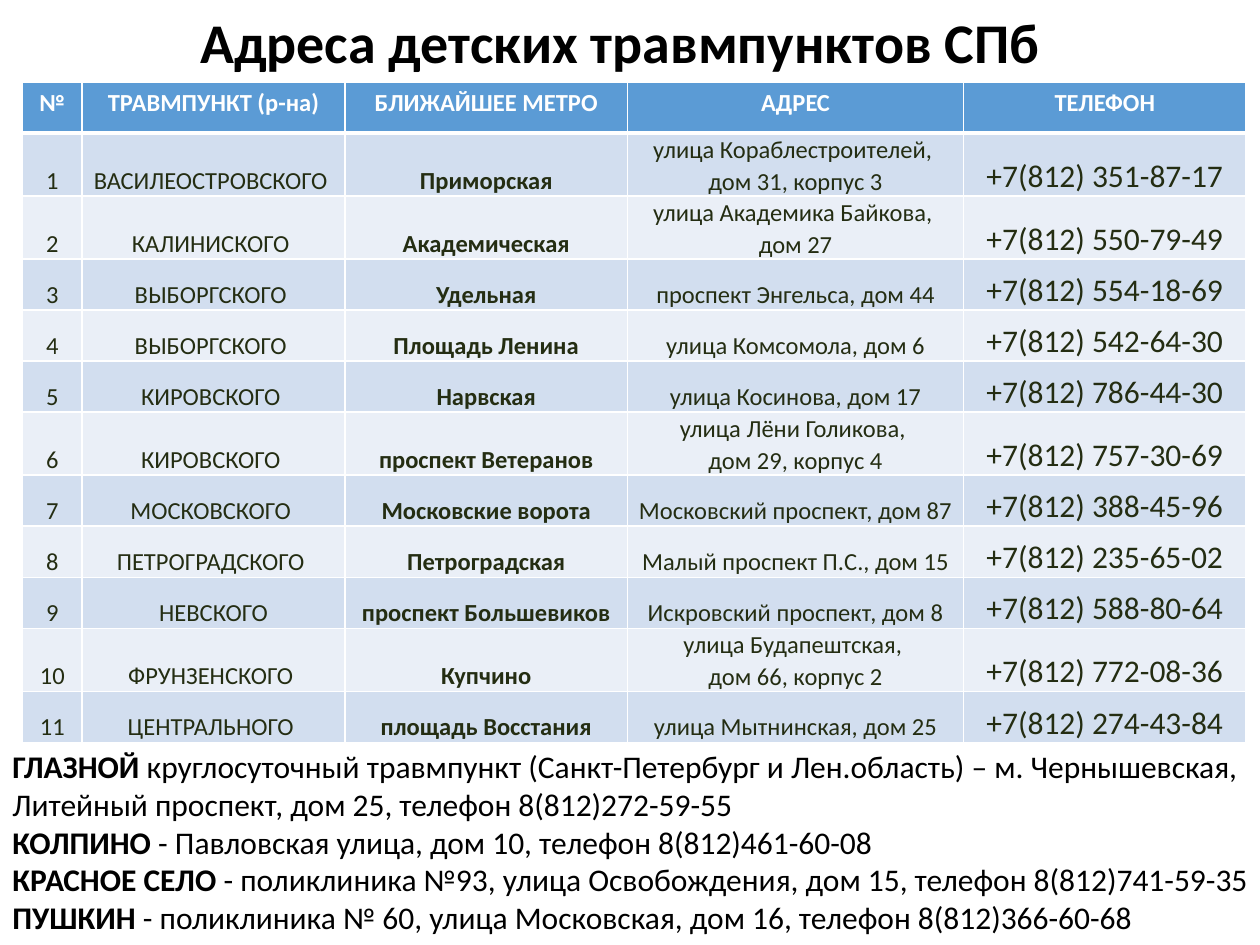
import pptx
import pptx.dml.color
import pptx.enum.text
import pptx.oxml.ns
import pptx.util
from lxml import etree

Inches = pptx.util.Inches
Pt = pptx.util.Pt
ALIGN = pptx.enum.text.PP_ALIGN
ANCHOR = pptx.enum.text.MSO_ANCHOR

FONT = "Calibri"
COLORS = {
    "text": "000000",
    "cell_text": "242D12",
    "white": "FFFFFF",
    "header": "5B9BD5",
    "odd_row": "D2DEEF",
    "even_row": "EAEFF7",
}
COLUMN_WIDTHS = [0.47, 2.09, 2.24, 2.67, 2.24]
ROW_HEIGHT = 4.87 / 12
HEADERS = ["№", "ТРАВМПУНКТ (р-на)", "БЛИЖАЙШЕЕ МЕТРО", "АДРЕС", "ТЕЛЕФОН"]
METRO, PHONE = 2, 4
CLINICS = [
    ("ВАСИЛЕОСТРОВСКОГО ", "Приморская", "улица Кораблестроителей, \nдом 31, корпус 3", "351-87-17"),
    ("КАЛИНИСКОГО ", "Академическая", "улица Академика Байкова, \nдом 27", "550-79-49"),
    ("ВЫБОРГСКОГО ", "Удельная", "проспект Энгельса, дом 44", "554-18-69"),
    ("ВЫБОРГСКОГО ", "Площадь Ленина", "улица Комсомола, дом 6", "542-64-30"),
    ("КИРОВСКОГО ", "Нарвская", "улица Косинова, дом 17", "786-44-30"),
    ("КИРОВСКОГО ", "проспект Ветеранов", "улица Лёни Голикова, \nдом 29, корпус 4", "757-30-69"),
    ("МОСКОВСКОГО ", "Московские ворота", "Московский проспект, дом 87", "388-45-96"),
    ("ПЕТРОГРАДСКОГО ", "Петроградская", "Малый проспект П.С., дом 15", "235-65-02"),
    ("НЕВСКОГО", "проспект Большевиков", "Искровский проспект, дом 8", "588-80-64"),
    ("ФРУНЗЕНСКОГО ", "Купчино", "улица Будапештская, \nдом 66, корпус 2", "772-08-36"),
    ("ЦЕНТРАЛЬНОГО ", "площадь Восстания", "улица Мытнинская, дом 25", "274-43-84"),
]
# Paragraphs of lines, each line a bold lead and its plain continuation
OTHER_CLINICS = [
    [("ГЛАЗНОЙ", " круглосуточный травмпункт (Санкт-Петербург и Лен.область) – м. Чернышевская,")],
    [
        ("", "Литейный проспект, дом 25, телефон 8(812)272-59-55"),
        ("КОЛПИНО", " - Павловская улица, дом 10, телефон 8(812)461-60-08"),
        ("КРАСНОЕ СЕЛО", " - поликлиника №93, улица Освобождения, дом 15, телефон 8(812)741-59-35"),
        ("ПУШКИН", " - поликлиника № 60, улица Московская, дом 16, телефон 8(812)366-60-68"),
    ],
]


def rgb(name):
    return pptx.dml.color.RGBColor.from_string(COLORS[name])


def format_run(r, size, color="text", bold=False):
    r.font.name = FONT
    r.font.size = Pt(size)
    r.font.bold = bold
    r.font.color.rgb = rgb(color)


def set_borders(cell, top=1, bottom=1):
    """Draw white borders; call before filling the cell, as the schema wants lines first."""
    tcPr = cell._tc.get_or_add_tcPr()
    qn = pptx.oxml.ns.qn
    for side, width in (("L", 1), ("R", 1), ("T", top), ("B", bottom)):
        ln = etree.SubElement(tcPr, qn(f"a:ln{side}"), w=str(Pt(width)))
        fill = etree.SubElement(ln, qn("a:solidFill"))
        etree.SubElement(fill, qn("a:srgbClr"), val=COLORS["white"])


def fill_cell(cell, text, fill, color, size, bold, line_spacing=None):
    cell.fill.solid()
    cell.fill.fore_color.rgb = rgb(fill)
    cell.text_frame.text = text
    for p in cell.text_frame.paragraphs:
        p.alignment = ALIGN.CENTER
        p.line_spacing = line_spacing
        for r in p.runs:
            format_run(r, size, color, bold)


def add_title(s):
    tf = s.shapes.add_textbox(Inches(1.49), Inches(0.1), Inches(8.08), Inches(0.52)).text_frame
    tf.word_wrap = True
    tf.vertical_anchor = ANCHOR.MIDDLE
    tf.text = "Адреса детских травмпунктов СПб"
    p = tf.paragraphs[0]
    p.line_spacing = 0.9
    format_run(p.runs[0], 32, bold=True)


def add_clinic_table(s):
    rows = len(CLINICS) + 1
    table = s.shapes.add_table(
        rows, len(HEADERS), Inches(0.18), Inches(0.65),
        Inches(sum(COLUMN_WIDTHS)), Inches(ROW_HEIGHT * rows)).table
    for column, width in zip(table.columns, COLUMN_WIDTHS):
        column.width = Inches(width)
    for row in table.rows:
        row.height = Inches(ROW_HEIGHT)

    for j, text in enumerate(HEADERS):
        cell = table.cell(0, j)
        set_borders(cell, bottom=3)
        fill_cell(cell, text, "header", "white", 14, True)

    for i, (district, metro, address, phone) in enumerate(CLINICS, 1):
        fill = "odd_row" if i % 2 else "even_row"
        for j, text in enumerate((str(i), district, metro, address, f"+7(812) {phone}")):
            cell = table.cell(i, j)
            cell.vertical_anchor = ANCHOR.BOTTOM
            cell.margin_left = cell.margin_right = Inches(0.02)
            cell.margin_top = cell.margin_bottom = 0
            set_borders(cell, top=3 if i == 1 else 1)
            fill_cell(cell, text, fill, "cell_text", 18 if j == PHONE else 14, j == METRO, 1.07)


def add_other_clinics(s):
    tf = s.shapes.add_textbox(0, Inches(5.88), Inches(10.11), Inches(1.62)).text_frame
    tf.word_wrap = False
    tf.auto_size = pptx.enum.text.MSO_AUTO_SIZE.SHAPE_TO_FIT_TEXT
    for i, lines in enumerate(OTHER_CLINICS):
        p = tf.add_paragraph() if i else tf.paragraphs[0]
        for k, (lead, rest) in enumerate(lines):
            if k:
                p.add_line_break()
            for text, bold in ((lead, True), (rest, False)):
                if text:
                    r = p.add_run()
                    r.text = text
                    format_run(r, 18, bold=bold)


def main():
    prs = pptx.Presentation()
    prs.slide_width = Inches(10)
    prs.slide_height = Inches(7.5)
    s = prs.slides.add_slide(prs.slide_layouts[6])
    add_title(s)
    add_clinic_table(s)
    add_other_clinics(s)
    prs.save("out.pptx")


if __name__ == "__main__":
    main()
